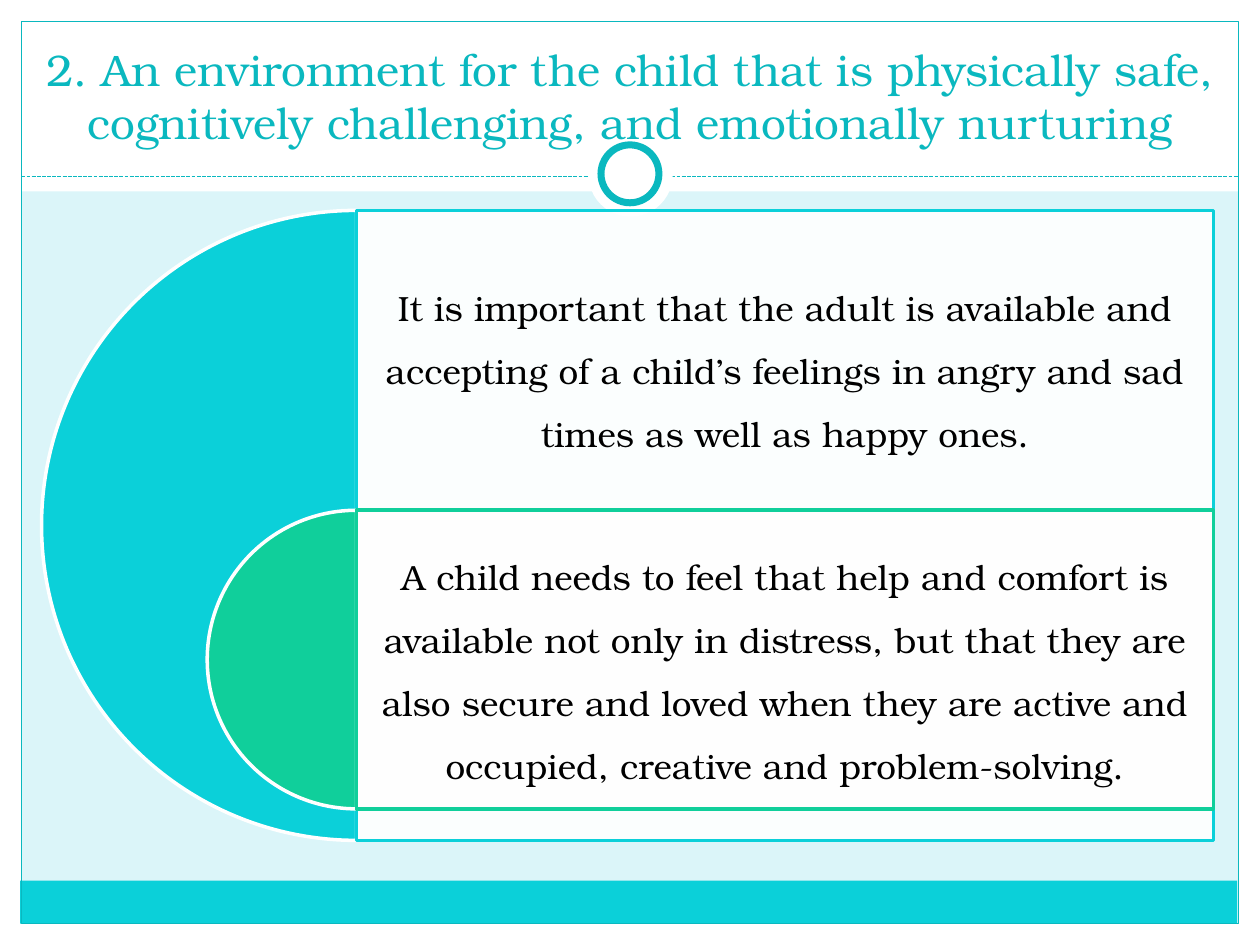
import pptx
import pptx.util
import pptx.dml.color
import pptx.enum.dml
import pptx.enum.shapes
import pptx.enum.text
import pptx.oxml.ns
import lxml.etree

Inches = pptx.util.Inches
Pt = pptx.util.Pt
SHAPE = pptx.enum.shapes.MSO_SHAPE
ANCHOR = pptx.enum.text.MSO_ANCHOR
qn = pptx.oxml.ns.qn

FONT = "TeX Gyre Bonum"
COLORS = {
    "background": "DBF5F9",
    "white": "FFFFFF",
    "black": "000000",
    "teal": "0AB8BF",
    "cyan": "0BD0D9",
    "green": "10CF9B",
}


class SlideBuilder:
    """Holds the style and the current slide."""

    def __init__(self, slide):
        self.slide = slide
        fill = slide.background.fill
        fill.solid()
        fill.fore_color.rgb = self.color("background")

    def color(self, name):
        return pptx.dml.color.RGBColor.from_string(COLORS[name])

    def shape(self, kind, box, fill=None, line=None, width=0.75, opacity=None):
        shape = self.slide.shapes.add_shape(kind, *map(Inches, box))
        shape.shadow.inherit = False
        if fill:
            shape.fill.solid()
            shape.fill.fore_color.rgb = self.color(fill)
        else:
            shape.fill.background()
        if opacity:
            color = shape.element.spPr.find(qn("a:solidFill"))[0]
            alpha = lxml.etree.SubElement(color, qn("a:alpha"))
            alpha.set("val", str(opacity * 1000))
        if line:
            shape.line.color.rgb = self.color(line)
            shape.line.width = Pt(width)
        else:
            shape.line.fill.background()
        return shape

    def half_disc(self, left, top, size, fill):
        disc = self.shape(SHAPE.PIE, (left, top, size, size), fill, "white", 2)
        # Left half: from 90 to 270 degrees
        disc.adjustments[0] = 54
        disc.adjustments[1] = 162

    def dashed_line(self, left, right, y):
        rule = self.slide.shapes.add_connector(
            pptx.enum.shapes.MSO_CONNECTOR.STRAIGHT,
            Inches(left), Inches(y), Inches(right), Inches(y))
        rule.line.color.rgb = self.color("teal")
        rule.line.width = Pt(0.75)
        rule.line.dash_style = pptx.enum.dml.MSO_LINE.SQUARE_DOT
        lxml.etree.SubElement(rule.element.spPr, qn("a:effectLst"))

    def set_text(self, frame, text, size, color, anchor):
        frame.text = text
        frame.word_wrap = True
        frame.auto_size = pptx.enum.text.MSO_AUTO_SIZE.NONE
        frame.vertical_anchor = anchor
        paragraph = frame.paragraphs[0]
        paragraph.alignment = pptx.enum.text.PP_ALIGN.CENTER
        font = paragraph.runs[0].font
        font.name = FONT
        font.size = Pt(size)
        font.color.rgb = self.color(color)
        return paragraph

    def title(self, text, box):
        title = self.slide.shapes.title
        title.left, title.top, title.width, title.height = map(Inches, box)
        self.set_text(title.text_frame, text, 25.2, "teal", ANCHOR.BOTTOM)
        # Bring the title in front of the frame
        title.element.getparent().append(title.element)

    def statement(self, text, box):
        frame = self.slide.shapes.add_textbox(*map(Inches, box)).text_frame
        frame.margin_left = frame.margin_right = Inches(0.08)
        frame.margin_top = frame.margin_bottom = Inches(0.08)
        paragraph = self.set_text(frame, text, 20, "black", ANCHOR.MIDDLE)
        paragraph.line_spacing = 1.5
        paragraph.space_after = Pt(7)


def main():
    deck = pptx.Presentation()
    deck.slide_width, deck.slide_height = Inches(10), Inches(7.5)
    builder = SlideBuilder(deck.slides.add_slide(deck.slide_layouts[5]))

    # White margins, footer band and outer frame
    for margin in ((0, 7.33, 10, 0.17), (0, 0, 10, 1.52),
                   (0, 0, 0.17, 7.5), (9.83, 0, 0.17, 7.5)):
        builder.shape(SHAPE.RECTANGLE, margin, "white")
    builder.shape(SHAPE.RECTANGLE, (0.16, 6.99, 9.66, 0.34), "cyan")
    builder.shape(SHAPE.RECTANGLE, (0.17, 0.17, 9.66, 7.16), line="teal")

    # Header rule with its ring
    builder.dashed_line(0.17, 9.83, 1.4)
    builder.shape(SHAPE.OVAL, (4.67, 1.05, 0.67, 0.67), "white")
    builder.shape(SHAPE.OVAL, (4.77, 1.15, 0.46, 0.46), "white", "teal", 4)

    builder.title("2. An environment for the child that is physically safe, "
                  "cognitively challenging, and emotionally nurturing",
                  (0, -0.16, 10, 1.39))

    # Nested half discs, each with its panel and statement
    panel_left, panel_width, statement_height = 2.83, 6.8, 2.38
    levels = (
        (1.67, 5, "cyan",
         "It is important that the adult is available and accepting of a "
         "child’s feelings in angry and sad times as well as happy ones."),
        (4.05, 2.37, "green",
         "A child needs to feel that help and comfort is available not only "
         "in distress, but that they are also secure and loved when they are "
         "active and occupied, creative and problem-solving."),
    )
    for top, size, color, text in levels:
        builder.half_disc(panel_left - size / 2, top, size, color)
        builder.shape(SHAPE.RECTANGLE, (panel_left, top, panel_width, size),
                      "white", color, 2, opacity=90)
        builder.statement(text, (panel_left, top, panel_width, statement_height))

    deck.save("out.pptx")


if __name__ == "__main__":
    main()
